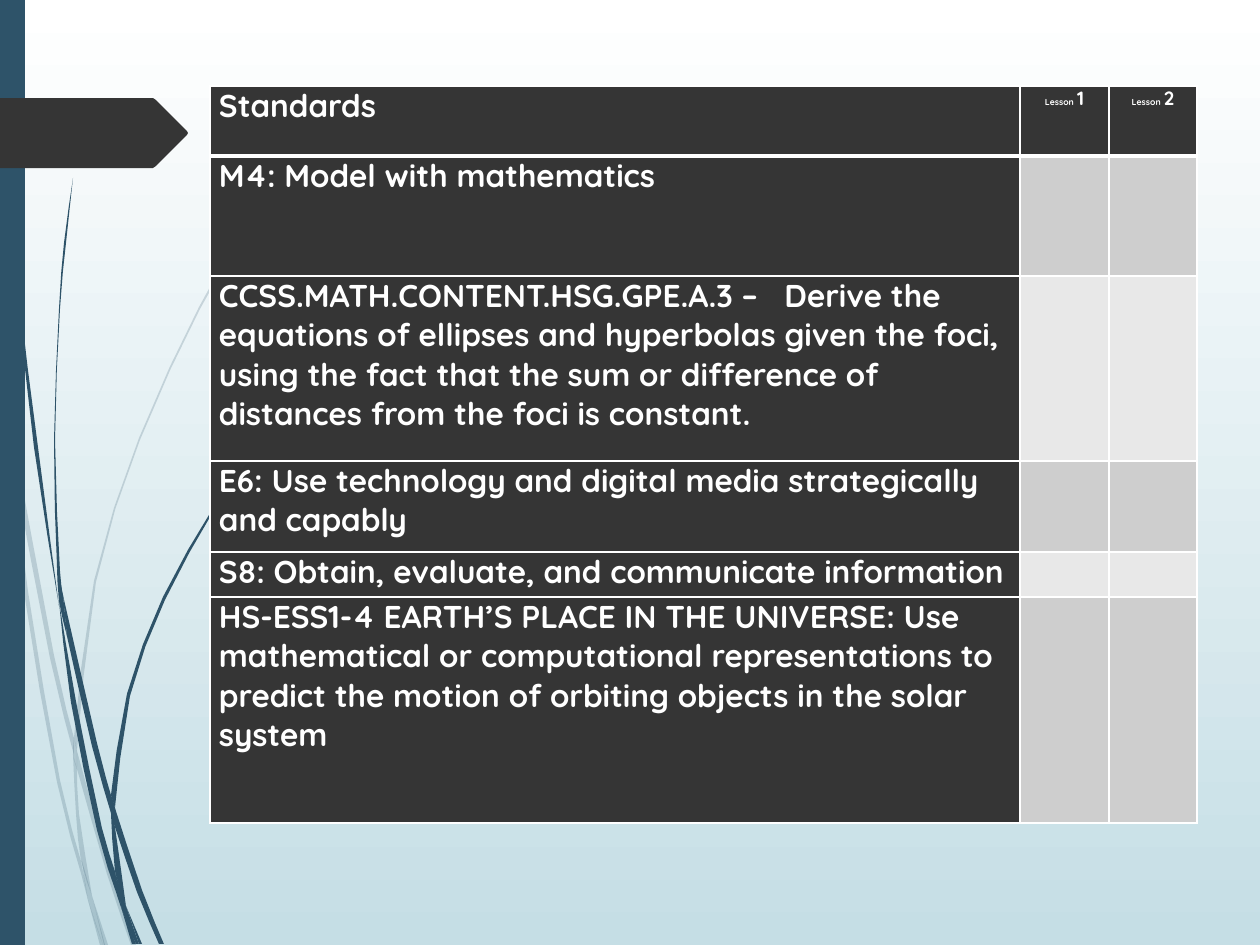
from lxml.etree import SubElement
from pptx import Presentation
from pptx.dml.color import RGBColor
from pptx.enum.shapes import MSO_SHAPE
from pptx.enum.text import PP_ALIGN
from pptx.oxml.ns import qn
from pptx.util import Emu, Pt

EMU_PER_PX = 914400 / 126
FONT = "Quicksand"
WHITE = RGBColor(0xFF, 0xFF, 0xFF)
SKY = RGBColor(0xC5, 0xDE, 0xE5)
TEAL = RGBColor(0x2E, 0x53, 0x69)
CHARCOAL = RGBColor(0x35, 0x35, 0x35)
GREYS = (RGBColor(0xE8, 0xE8, 0xE8), RGBColor(0xCE, 0xCE, 0xCE))

FAINT_BLADES = [
    ([(0, 355), (8, 406), (10, 441)], [(0, 377), (10, 441)]),
    ([(13, 435), (54, 655), (74, 738)], [(15, 474), (50, 658), (74, 755)]),
    ([(77, 751), (111, 872), (136, 945)], [(77, 769), (107, 874), (131, 945)]),
    ([(92, 896), (108, 945)], [(92, 896), (104, 945)]),
    ([(10, 441), (28, 591), (60, 780), (81, 861), (88, 900)],
     [(10, 441), (24, 592), (57, 782), (81, 873), (88, 900)]),
    ([(73, 755), (76, 814), (81, 861), (92, 896)],
     [(77, 769), (79, 814), (92, 896)]),
    ([(273, 193), (234, 248), (199, 307), (139, 438), (94, 581), (74, 738)],
     [(273, 194), (236, 249), (200, 309), (140, 440), (96, 582), (77, 751)]),
    ([(88, 900), (100, 945)], [(88, 900), (103, 945)]),
    ([(74, 738), (73, 755), (77, 769)], [(74, 738), (77, 751), (77, 769)]),
    ([(82, 861), (88, 900), (103, 945)], [(82, 861), (92, 896), (105, 945)]),
]
DARK_BLADES = [
    ([(3, 0), (6, 139), (18, 294), (34, 447), (59, 606)],
     [(4, 0), (8, 137), (19, 292), (38, 447), (59, 606)]),
    ([(63, 595), (97, 743), (111, 795)], [(67, 636), (92, 746), (111, 813)]),
    ([(115, 808), (142, 890), (164, 944)], [(115, 827), (137, 892), (159, 944)]),
    ([(59, 601), (76, 701), (102, 828), (115, 871), (122, 910)],
     [(59, 601), (71, 702), (97, 830), (116, 892), (122, 910)]),
    ([(73, 178), (64, 243), (59, 309), (54, 440), (57, 566), (62, 595)],
     [(73, 178), (66, 243), (60, 309), (55, 440), (60, 571), (63, 595)]),
    ([(126, 906), (139, 944)], [(126, 906), (142, 944)]),
    ([(57, 566), (59, 601), (67, 636)], [(57, 566), (63, 595), (67, 636)]),
    ([(271, 433), (241, 470), (212, 510), (163, 597), (127, 694), (111, 795)],
     [(272, 433), (241, 471), (213, 512), (165, 600), (130, 696), (115, 808)]),
    ([(122, 910), (132, 944)], [(122, 910), (136, 944)]),
    ([(111, 813), (115, 871), (126, 906)], [(111, 813), (115, 827), (126, 906)]),
    ([(111, 795), (111, 813), (115, 827)], [(111, 795), (115, 808), (115, 827)]),
    ([(115, 871), (122, 910), (136, 944)], [(115, 871), (126, 906), (139, 944)]),
]
TAG_OUTLINE = [(0, 98), (153, 98), (156, 100), (187, 131), (188, 133),
               (187, 135), (156, 166), (153, 168), (0, 168)]

COLUMN_WIDTHS = (810, 89, 88)
ROW_HEIGHTS = (70, 120, 185, 91, 45, 226)
STANDARDS = [
    "M4: Model with mathematics",
    "CCSS.MATH.CONTENT.HSG.GPE.A.3 –   Derive the equations of ellipses and "
    "hyperbolas given the foci, using the fact that the sum or difference of "
    "distances from the foci is constant.",
    "E6: Use technology and digital media strategically and capably",
    "S8: Obtain, evaluate, and communicate information",
    "HS-ESS1-4 EARTH’S PLACE IN THE UNIVERSE: Use mathematical or computational "
    "representations to predict the motion of orbiting objects in the solar system",
]


def px(length):
    """Turn pixels into EMU."""
    return Emu(round(length * EMU_PER_PX))


def paint(shape, color, opacity=100):
    """Fill a shape plainly, without line or shadow."""
    shape.shadow.inherit = False
    shape.line.fill.background()
    shape.fill.solid()
    shape.fill.fore_color.rgb = color
    if opacity < 100:
        tint = shape.fill._xPr.find(".//" + qn("a:srgbClr"))
        SubElement(tint, qn("a:alpha"), val=str(opacity * 1000))


def add_outline(slide, points, color, opacity=100):
    """Draw a closed, filled outline through the points."""
    corners = [(px(x), px(y)) for x, y in points]
    builder = slide.shapes.build_freeform(*corners[0], scale=1.0)
    builder.add_line_segments(corners[1:], close=True)
    paint(builder.convert_to_shape(), color, opacity)


def smooth_edge(points):
    """Add the midpoints of a Catmull-Rom curve between the points."""
    padded = [points[0], *points, points[-1]]
    edge = []
    for a, b, c, d in zip(padded, padded[1:], padded[2:], padded[3:]):
        middle = tuple((9 * (q + r) - p - s) / 16 for p, q, r, s in zip(a, b, c, d))
        edge += [b, middle]
    return [*edge, points[-1]]


def add_blades(slide, blades, opacity=100):
    """Draw grass blades, each between its two edges."""
    for near_edge, far_edge in blades:
        outline = smooth_edge(near_edge) + smooth_edge(far_edge)[::-1]
        add_outline(slide, outline, TEAL, opacity)


def add_backdrop(slide):
    """Add the sky gradient, grass, side bar and tag."""
    sky = slide.background.fill
    sky.gradient()
    sky.gradient_angle = 270
    for stop, color, position in zip(sky.gradient_stops, (WHITE, SKY), (0, 1)):
        stop.color.rgb = color
        stop.position = position
    add_blades(slide, FAINT_BLADES, 20)
    add_blades(slide, DARK_BLADES)
    side_bar = slide.shapes.add_shape(MSO_SHAPE.RECTANGLE, 0, 0, px(25), px(945))
    paint(side_bar, TEAL)
    add_outline(slide, TAG_OUTLINE, CHARCOAL)


def style_cell(cell, color, top=1, bottom=1):
    """Set the margins, white borders and fill of a cell."""
    cell.margin_left = cell.margin_right = px(9)
    cell.margin_top = cell.margin_bottom = 0
    properties = cell._tc.get_or_add_tcPr()
    for side, width in (("L", 1), ("R", 1), ("T", top), ("B", bottom)):
        border = SubElement(properties, qn(f"a:ln{side}"), w=str(Pt(width)))
        fill = SubElement(border, qn("a:solidFill"))
        SubElement(fill, qn("a:srgbClr"), val=str(WHITE))
    cell.fill.solid()
    cell.fill.fore_color.rgb = color


def write_runs(cell, runs, align=PP_ALIGN.LEFT):
    """Write bold white runs, given as text and size, in a cell."""
    paragraph = cell.text_frame.paragraphs[0]
    paragraph.alignment = align
    for text, size in runs:
        run = paragraph.add_run()
        run.text = text
        run.font.name = FONT
        run.font.size = Pt(size)
        run.font.bold = True
        run.font.color.rgb = WHITE


def add_standards_table(slide):
    """Add the table of standards against lessons."""
    table = slide.shapes.add_table(
        len(ROW_HEIGHTS), len(COLUMN_WIDTHS), px(210), px(86),
        px(sum(COLUMN_WIDTHS)), px(sum(ROW_HEIGHTS))).table
    for column, width in zip(table.columns, COLUMN_WIDTHS):
        column.width = px(width)
    for index, height in enumerate(ROW_HEIGHTS):
        table.rows[index].height = px(height)
        for number, cell in enumerate(table.rows[index].cells):
            is_dark = index == 0 or number == 0
            style_cell(cell, CHARCOAL if is_dark else GREYS[index % 2],
                       top=3 if index == 1 else 1, bottom=3 if index == 0 else 1)
    for index, standard in enumerate(["Standards", *STANDARDS]):
        write_runs(table.cell(index, 0), [(standard, 18)])
    for lesson in (1, 2):
        write_runs(table.cell(0, lesson),
                   [("Lesson", 5), (" ", 6), (str(lesson), 11)], PP_ALIGN.CENTER)


def main():
    """Build and save the slide."""
    deck = Presentation()
    deck.slide_width, deck.slide_height = px(1260), px(945)
    slide = deck.slides.add_slide(deck.slide_layouts[6])
    add_backdrop(slide)
    add_standards_table(slide)
    deck.save("out.pptx")


if __name__ == "__main__":
    main()
